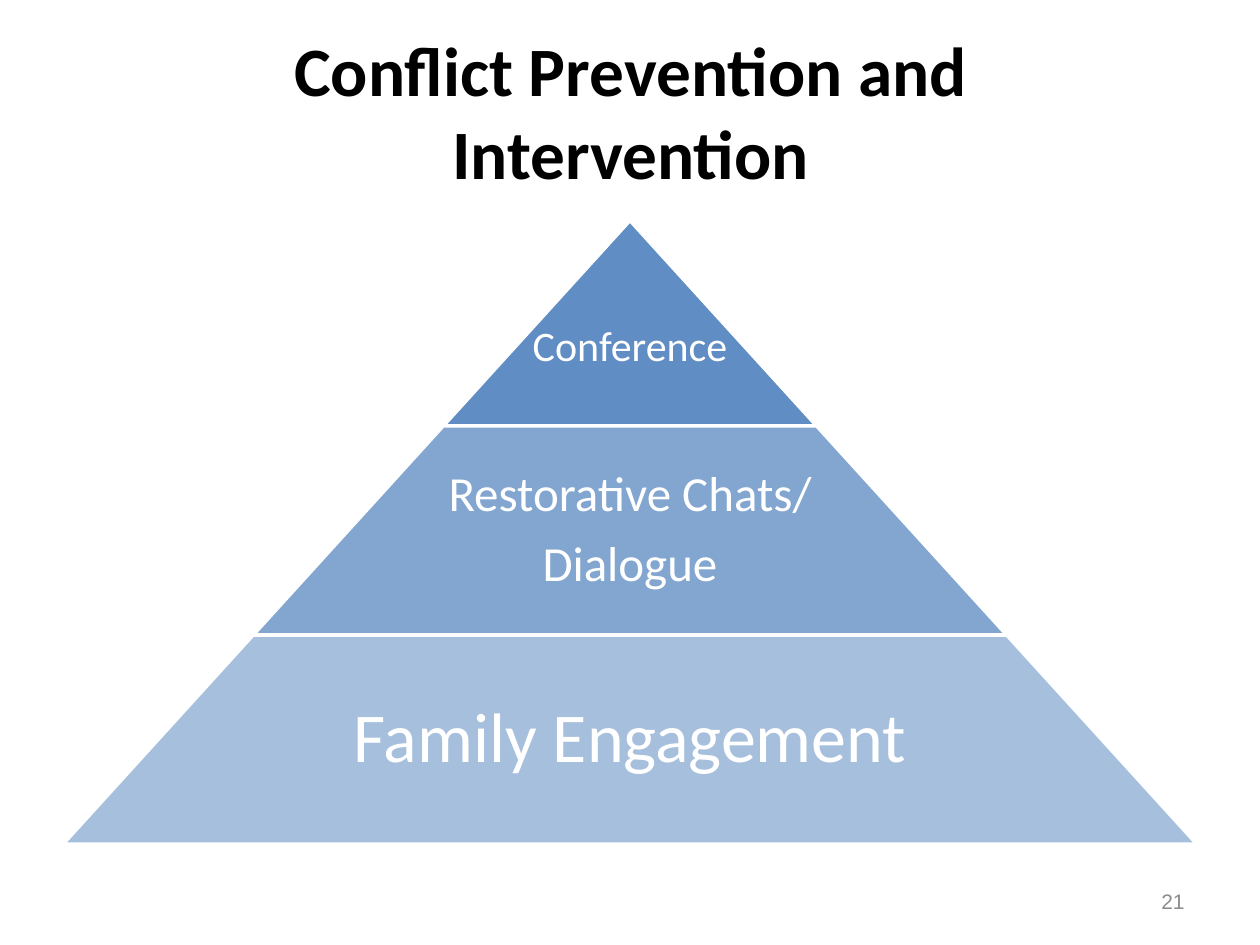
import pptx
import pptx.util
import pptx.dml.color
import pptx.enum.shapes
import pptx.enum.text
import lxml.etree
from pptx.util import Pt


def colour(hex_value):
    return pptx.dml.color.RGBColor.from_string(hex_value)


def add_run(para, text, size, font_name, hex_value, bold=False):
    span = para.add_run()
    span.text = text
    span.font.size = Pt(size)
    span.font.name = font_name
    span.font.bold = bold
    span.font.color.rgb = colour(hex_value)


align = pptx.enum.text.PP_ALIGN
middle = pptx.enum.text.MSO_ANCHOR.MIDDLE

deck = pptx.Presentation()
deck.slide_width, deck.slide_height = Pt(720), Pt(540)
page = deck.slides.add_slide(deck.slide_layouts[5])

title = page.shapes.title
title.left, title.top, title.width, title.height = Pt(86.4), Pt(18), Pt(548), Pt(90)
title.text_frame.vertical_anchor = middle
title.text_frame.word_wrap = True
para = title.text_frame.paragraphs[0]
para.alignment = align.CENTER
add_run(para, "Conflict Prevention and Intervention", 39.6, "Calibri", "000000", True)

centre = 360
apex = 126
slope = 0.909
levels = [
    (["Conference"], 117.4, 90, 24, 1, 2.4, 31),
    (["Restorative Chats/", "Dialogue"], 119.5, 70, 28, 0.65, 2.8, 2.8),
    (["Family Engagement"], 119.5, 50, 40, 0.65, 4, 4),
]
top = apex
for lines, height, opacity, size, text_share, inset, top_inset in levels:
    width = 2 * slope * (top + height - apex)
    band = page.shapes.add_shape(
        pptx.enum.shapes.MSO_SHAPE.TRAPEZOID,
        Pt(centre - width / 2), Pt(top), Pt(width), Pt(height))
    band.adjustments[0] = slope
    band.shadow.inherit = False
    band.fill.solid()
    band.fill.fore_color.rgb = colour("4F81BD")
    fill_colour = band.fill._xPr.find(".//" + pptx.oxml.ns.qn("a:srgbClr"))
    alpha = lxml.etree.SubElement(fill_colour, pptx.oxml.ns.qn("a:alpha"))
    alpha.set("val", str(opacity * 1000))
    band.line.color.rgb = colour("FFFFFF")
    band.line.width = Pt(2)

    text_width = width * text_share
    box = page.shapes.add_textbox(
        Pt(centre - text_width / 2), Pt(top), Pt(text_width), Pt(height))
    frame = box.text_frame
    frame.word_wrap = True
    frame.vertical_anchor = middle
    frame.margin_left = frame.margin_right = frame.margin_bottom = Pt(inset)
    frame.margin_top = Pt(top_inset)
    for index, line in enumerate(lines):
        para = frame.add_paragraph() if index else frame.paragraphs[0]
        para.alignment = align.CENTER
        para.line_spacing = 0.9
        para.space_after = Pt(size * 0.35)
        add_run(para, line, size, "Calibri", "FFFFFF")
    top += height

number = page.shapes.add_textbox(Pt(516), Pt(500.5), Pt(168), Pt(28.8))
number.text_frame.word_wrap = True
number.text_frame.vertical_anchor = middle
para = number.text_frame.paragraphs[0]
para.alignment = align.RIGHT
add_run(para, "21", 12, "Arial", "8C8C8C")

deck.save("out.pptx")
